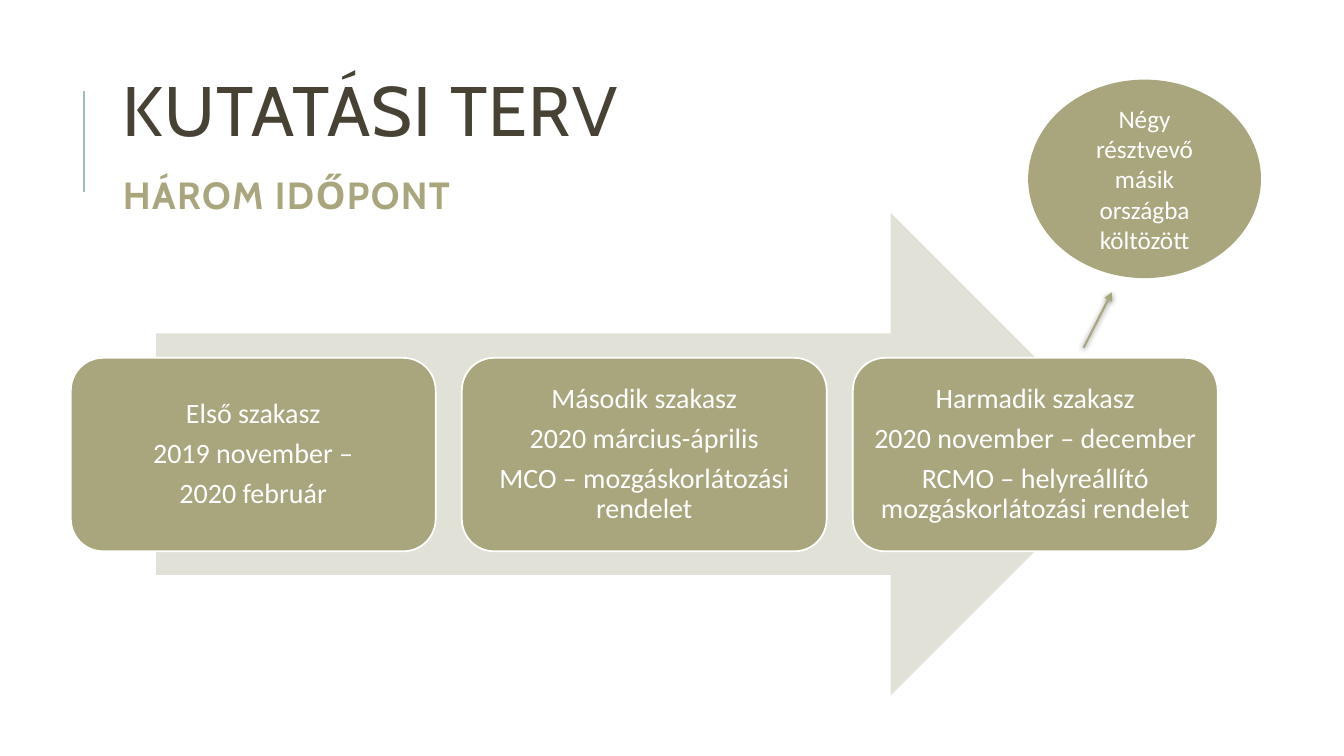
import pptx
import pptx.util
import pptx.dml.color
import pptx.enum.shapes
import pptx.enum.text
import pptx.oxml
import pptx.oxml.ns

Pt = pptx.util.Pt
SHAPE = pptx.enum.shapes.MSO_SHAPE
ALIGN = pptx.enum.text.PP_ALIGN
MIDDLE = pptx.enum.text.MSO_ANCHOR.MIDDLE

OLIVE, PALE, DARK, TEAL, WHITE = "A9A57C", "E2E1D7", "474233", "9CBEBD", "FFFFFF"
NS = pptx.oxml.ns.nsdecls("a")
SHADOW = ('<a:outerShdw blurRad="50800" dist="12700" dir="5400000" rotWithShape="0">'
          '<a:srgbClr val="000000"><a:alpha val="50000"/></a:srgbClr></a:outerShdw>')

STAGES = [
    ["Első szakasz", "2019 november –", "2020 február"],
    ["Második szakasz", "2020 március-április", "MCO – mozgáskorlátozási rendelet"],
    ["Harmadik szakasz", "2020 november – december",
     "RCMO – helyreállító mozgáskorlátozási rendelet"],
]


def rgb(code):
    return pptx.dml.color.RGBColor.from_string(code)


def add_run(para, text, size, color, font, bold=False):
    run = para.add_run()
    run.text = text
    run.font.size = Pt(size)
    run.font.name = font
    run.font.bold = bold
    run.font.color.rgb = rgb(color)
    return run


def add_title(slide, lines):
    """Fill the title from (text, size, color, bold, space before) rows."""
    title = slide.shapes.title
    title.left, title.top, title.width, title.height = Pt(80.6), Pt(48), Pt(765.4), Pt(118)
    frame = title.text_frame
    frame.word_wrap = True
    frame.auto_size = pptx.enum.text.MSO_AUTO_SIZE.NONE
    frame.vertical_anchor = MIDDLE
    for i, (text, size, color, bold, gap) in enumerate(lines):
        para = frame.add_paragraph() if i else frame.paragraphs[0]
        para.alignment = ALIGN.LEFT
        para.line_spacing = 0.8
        para.space_before = Pt(gap)
        run = add_run(para, text, size, color, "Cabin", bold)
        run.font._element.set("spc", "100")


def add_shape(slide, kind, box, fill, line=None):
    shape = slide.shapes.add_shape(kind, *[Pt(n) for n in box])
    shape.shadow.inherit = False
    shape.fill.solid()
    shape.fill.fore_color.rgb = rgb(fill)
    if line:
        shape.line.color.rgb = rgb(line)
        shape.line.width = Pt(1.25)
    else:
        shape.line.fill.background()
    return shape


def set_text(shape, lines, size, spacing=1.0, after=0):
    frame = shape.text_frame
    frame.word_wrap = True
    frame.vertical_anchor = MIDDLE
    for i, text in enumerate(lines):
        para = frame.add_paragraph() if i else frame.paragraphs[0]
        para.alignment = ALIGN.CENTER
        para.line_spacing = spacing
        para.space_after = Pt(after)
        add_run(para, text, size, WHITE, "Calibri")


def add_stage(slide, left, lines):
    box = add_shape(slide, SHAPE.ROUNDED_RECTANGLE, (left, 255.6, 260.6, 138.2), OLIVE, WHITE)
    frame = box.text_frame
    frame.margin_left = frame.margin_right = Pt(6)
    frame.margin_top = frame.margin_bottom = Pt(6)
    set_text(box, lines, 20, 0.9, 7)


def add_line(slide, ends, color, effect="", head=False):
    line = slide.shapes.add_connector(
        pptx.enum.shapes.MSO_CONNECTOR.STRAIGHT, *[Pt(n) for n in ends])
    line.line.color.rgb = rgb(color)
    line.line.width = Pt(1.5)
    if head:
        line.line._get_or_add_ln().append(
            pptx.oxml.parse_xml(f'<a:tailEnd {NS} type="triangle"/>'))
    line._element.spPr.append(
        pptx.oxml.parse_xml(f"<a:effectLst {NS}>{effect}</a:effectLst>"))


def main():
    deck = pptx.Presentation()
    deck.slide_width, deck.slide_height = Pt(960), Pt(540)
    slide = deck.slides.add_slide(deck.slide_layouts[5])

    add_line(slide, (60, 136.8, 60, 64.8), TEAL)
    add_title(slide, [("KUTATÁSI TERV", 50, DARK, False, 0),
                      ("HÁROM IDŐPONT", 27, OLIVE, True, 21.6)])
    add_shape(slide, SHAPE.RIGHT_ARROW, (111.6, 151.9, 697, 344.9), PALE)
    for i, lines in enumerate(STAGES):
        add_stage(slide, 50.6 + i * 279.3, lines)
    note = add_shape(slide, SHAPE.OVAL, (734.4, 56.9, 166.3, 141.8), OLIVE)
    set_text(note, ["Négy résztvevő másik országba költözött"], 18)
    add_line(slide, (774, 248.4, 794.2, 208.8), OLIVE, SHADOW, True)

    deck.save("out.pptx")


if __name__ == "__main__":
    main()
